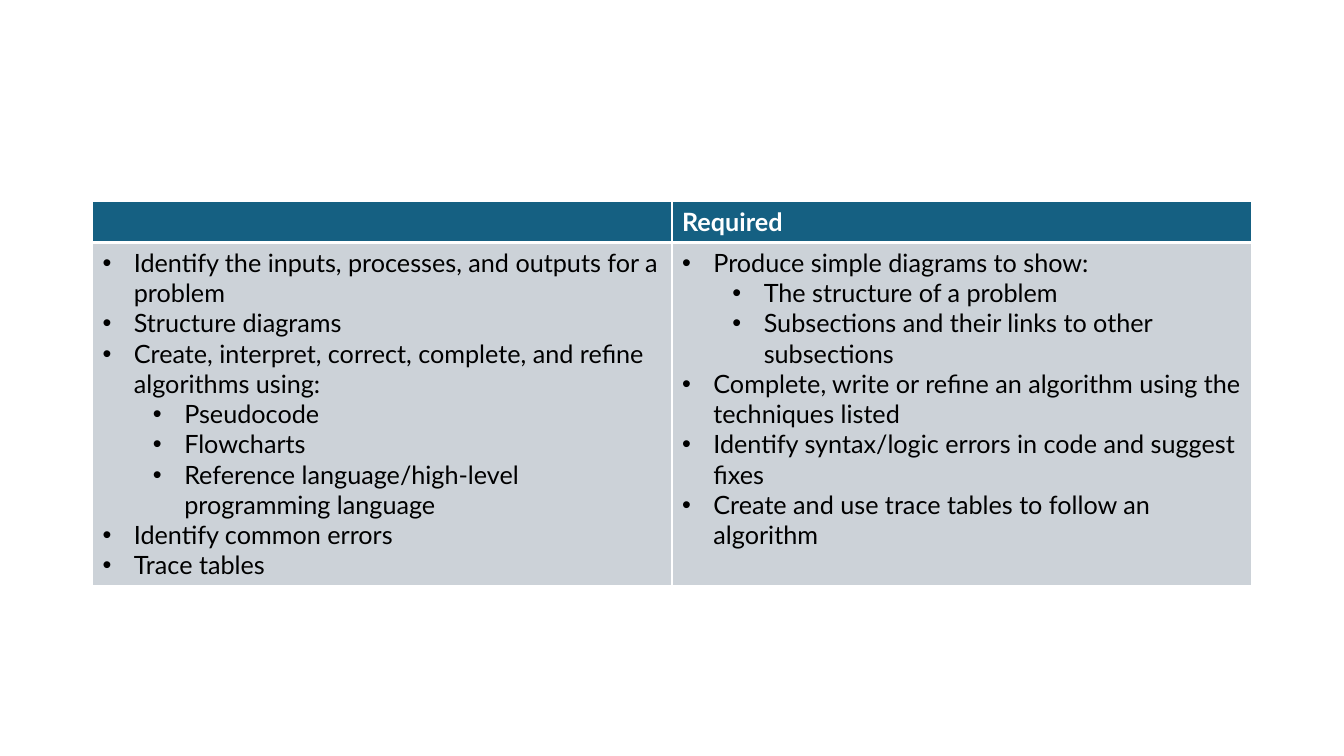
"""Build a slide with a two-column table of topics and required skills."""
from lxml import etree
from pptx import Presentation
from pptx.dml.color import RGBColor
from pptx.oxml.ns import qn
from pptx.util import Cm, Pt

FONT = "Lato"
TEAL = RGBColor(0x15, 0x60, 0x82)
GREY = RGBColor(0xCC, 0xD2, 0xD8)
WHITE = RGBColor(0xFF, 0xFF, 0xFF)
BLACK = RGBColor(0, 0, 0)
HEADINGS = ["", "Required"]
BULLETS = [
    [
        (0, "Identify the inputs, processes, and outputs for a problem"),
        (0, "Structure diagrams"),
        (0, "Create, interpret, correct, complete, and refine algorithms using:"),
        (1, "Pseudocode"),
        (1, "Flowcharts"),
        (1, "Reference language/high-level programming language"),
        (0, "Identify common errors"),
        (0, "Trace tables"),
    ],
    [
        (0, "Produce simple diagrams to show:"),
        (1, "The structure of a problem"),
        (1, "Subsections and their links to other subsections"),
        (0, "Complete, write or refine an algorithm using the techniques listed"),
        (0, "Identify syntax/logic errors in code and suggest fixes"),
        (0, "Create and use trace tables to follow an algorithm"),
    ],
]


def style_cell(cell, color, top, bottom):
    """Give a cell its white borders and its fill."""
    properties = cell._tc.get_or_add_tcPr()
    for side, width in (("L", 1), ("R", 1), ("T", top), ("B", bottom)):
        line = etree.SubElement(properties, qn(f"a:ln{side}"), w=str(Pt(width)))
        solid = etree.SubElement(line, qn("a:solidFill"))
        etree.SubElement(solid, qn("a:srgbClr"), val=str(WHITE))
    cell.fill.solid()
    cell.fill.fore_color.rgb = color


def add_text(paragraph, text, color, bold):
    """Add one formatted run to a paragraph."""
    run = paragraph.add_run()
    run.text = text
    run.font.name = FONT
    run.font.size = Pt(18)
    run.font.bold = bold
    run.font.color.rgb = color


presentation = Presentation()
presentation.slide_width = Cm(33.87)
presentation.slide_height = Cm(19.05)
slide = presentation.slides.add_slide(presentation.slide_layouts[6])

table = slide.shapes.add_table(2, 2, Cm(2.33), Cm(5.08), Cm(29.21), Cm(9.67)).table
table.rows[0].height = Cm(1.03)
table.rows[1].height = Cm(8.64)

for column, (heading, bullets) in enumerate(zip(HEADINGS, BULLETS)):
    header = table.cell(0, column)
    style_cell(header, TEAL, 1, 3)
    if heading:
        add_text(header.text_frame.paragraphs[0], heading, WHITE, True)

    body = table.cell(1, column)
    style_cell(body, GREY, 3, 1)
    frame = body.text_frame
    for index, (level, text) in enumerate(bullets):
        paragraph = frame.add_paragraph() if index else frame.paragraphs[0]
        paragraph.level = level
        properties = paragraph._p.get_or_add_pPr()
        properties.set("marL", str(Cm(0.79 + 1.27 * level)))
        properties.set("indent", str(Cm(-0.79)))
        etree.SubElement(properties, qn("a:buFont"), typeface="Arial")
        etree.SubElement(properties, qn("a:buChar"), char="•")
        add_text(paragraph, text, BLACK, False)

presentation.save("out.pptx")
